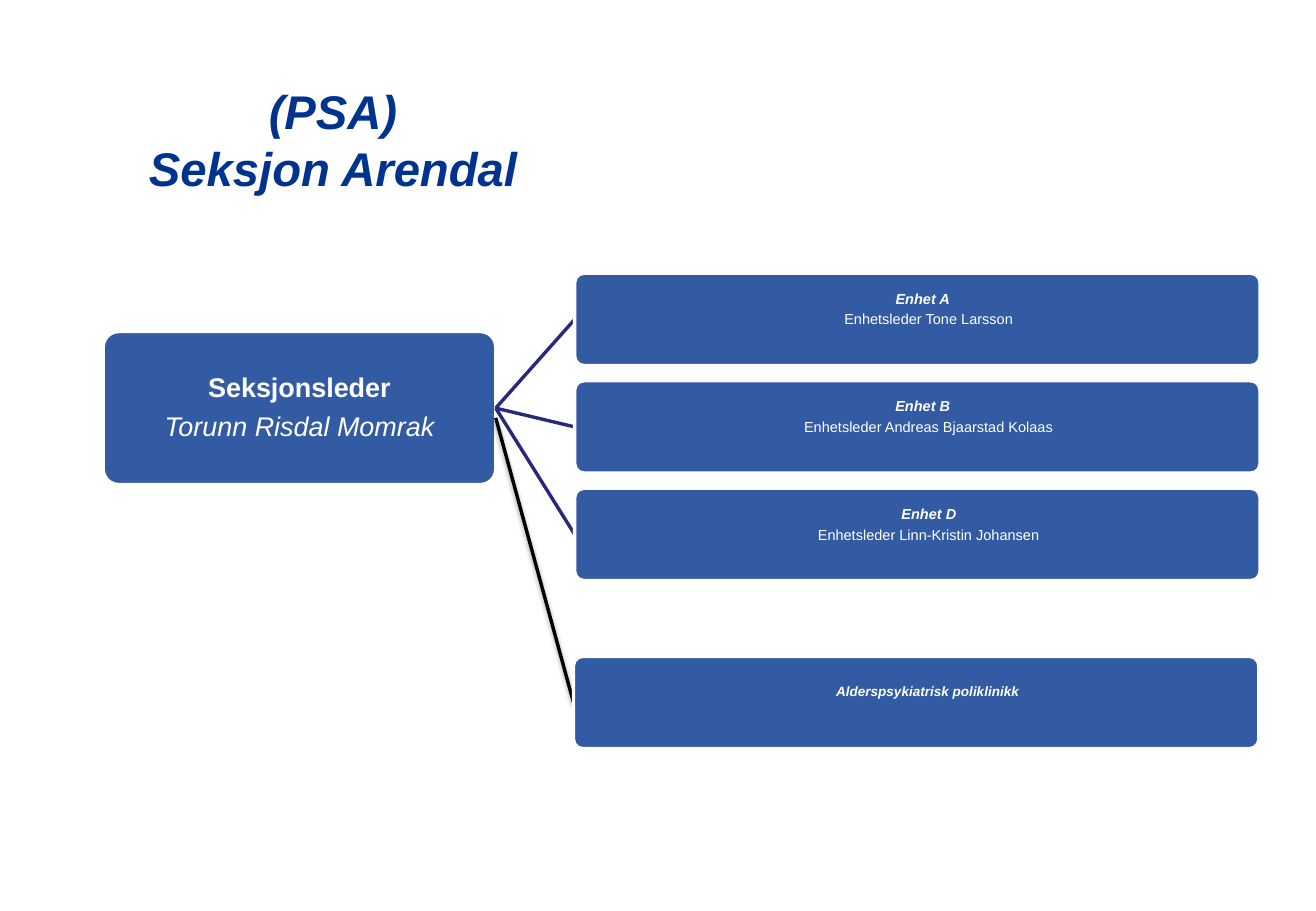
from lxml.etree import SubElement
from pptx import Presentation
from pptx.dml.color import RGBColor
from pptx.enum.shapes import MSO_CONNECTOR, MSO_SHAPE
from pptx.enum.text import MSO_ANCHOR, PP_ALIGN
from pptx.oxml.ns import qn
from pptx.util import Inches, Pt

WIDE, HIGH = Inches(10.83), Inches(7.5)
FONT = "Arial"
HUES = {"navy": "00338D", "link": "29297B", "white": "FFFFFF", "black": "000000"}
UNITS = [
    ("Enhet A", "Enhetsleder Tone Larsson", 0.09),
    ("Enhet B", "Enhetsleder Andreas Bjaarstad Kolaas", 0.09),
    ("Enhet D", "Enhetsleder Linn-Kristin Johansen", 0.19),
]


def hue(name):
    return RGBColor.from_string(HUES[name])


def across(share):
    return int(WIDE * share / 100)


def down(share):
    return int(HIGH * share / 100)


def place(x, y, w, h):
    return across(x), down(y), across(w), down(h)


def write(par, text, size, tone, bold, slant):
    par.text = text
    par.alignment = PP_ALIGN.CENTER
    font = par.font
    font.name, font.size = FONT, Pt(size)
    font.bold, font.italic = bold, slant
    font.color.rgb = hue(tone)


def add_title(slide, text, spot):
    frame = slide.shapes.add_textbox(*place(*spot)).text_frame
    frame.word_wrap = True
    write(frame.paragraphs[0], text, 28, "navy", True, True)


def add_box(slide, spot, lines, size, top=None):
    box = slide.shapes.add_shape(MSO_SHAPE.ROUNDED_RECTANGLE, *place(*spot))
    box.adjustments[0] = 0.1
    box.shadow.inherit = False
    box.fill.solid()
    box.fill.fore_color.rgb = hue("navy")
    tint = box.fill._xPr.find(qn("a:solidFill"))[0]
    SubElement(tint, qn("a:alpha"), val="80000")
    box.line.color.rgb = hue("white")
    box.line.width = Pt(2)
    frame = box.text_frame
    frame.word_wrap = True
    frame.margin_left = frame.margin_right = Inches(0.01)
    frame.margin_top = frame.margin_bottom = Inches(top or 0.01)
    frame.vertical_anchor = MSO_ANCHOR.TOP if top else MSO_ANCHOR.MIDDLE
    for i, (text, bold, slant, indent) in enumerate(lines):
        par = frame.add_paragraph() if i else frame.paragraphs[0]
        par._p.get_or_add_pPr().set("marL", str(Inches(indent)))
        write(par, text, size, "white", bold, slant)
        par.line_spacing = 0.9
        if i:
            par.space_before = Pt(size * 0.35)
    return box


def add_link(slide, tone, x=0, y=0):
    start = across(x), down(y)
    link = slide.shapes.add_connector(MSO_CONNECTOR.STRAIGHT, *start, *start)
    link.line.color.rgb = hue(tone)
    link.line.width = Pt(2)
    return link, SubElement(link._element.spPr, qn("a:effectLst"))


def add_shade(effects):
    shade = SubElement(effects, qn("a:outerShdw"), blurRad=str(Pt(3.1)),
                       dist=str(Pt(1.6)), dir="5400000", rotWithShape="0")
    tint = SubElement(shade, qn("a:srgbClr"), val=HUES["black"])
    SubElement(tint, qn("a:alpha"), val="38000")


def main():
    deck = Presentation()
    deck.slide_width, deck.slide_height = WIDE, HIGH
    slide = deck.slides.add_slide(deck.slide_layouts[6])

    add_title(slide, "(PSA)\vSeksjon Arendal", (8.59, 8.4, 33.43, 20))
    lead = add_box(slide, (7.85, 36.4, 29.82, 16.8), [
        ("Seksjonsleder", True, False, 0),
        ("Torunn Risdal Momrak", False, True, 0),
    ], 16)

    for row, (name, head, indent) in enumerate(UNITS):
        link, _ = add_link(slide, "link")
        unit = add_box(slide, (43.67, 30 + 11.8 * row, 52.08, 10.13), [
            (name, True, True, indent),
            (head, False, False, 0.19),
        ], 8.6, 0.13)
        link.begin_connect(lead, 3)
        link.end_connect(unit, 1)

    link, effects = add_link(slide, "black", 37.67, 45.87)
    add_shade(effects)
    clinic = add_box(slide, (43.58, 72.05, 52.08, 10.13), [
        ("Alderspsykiatrisk poliklinikk", True, True, 0.19),
    ], 8, 0.21)
    link.end_connect(clinic, 1)

    deck.save("out.pptx")


if __name__ == "__main__":
    main()
